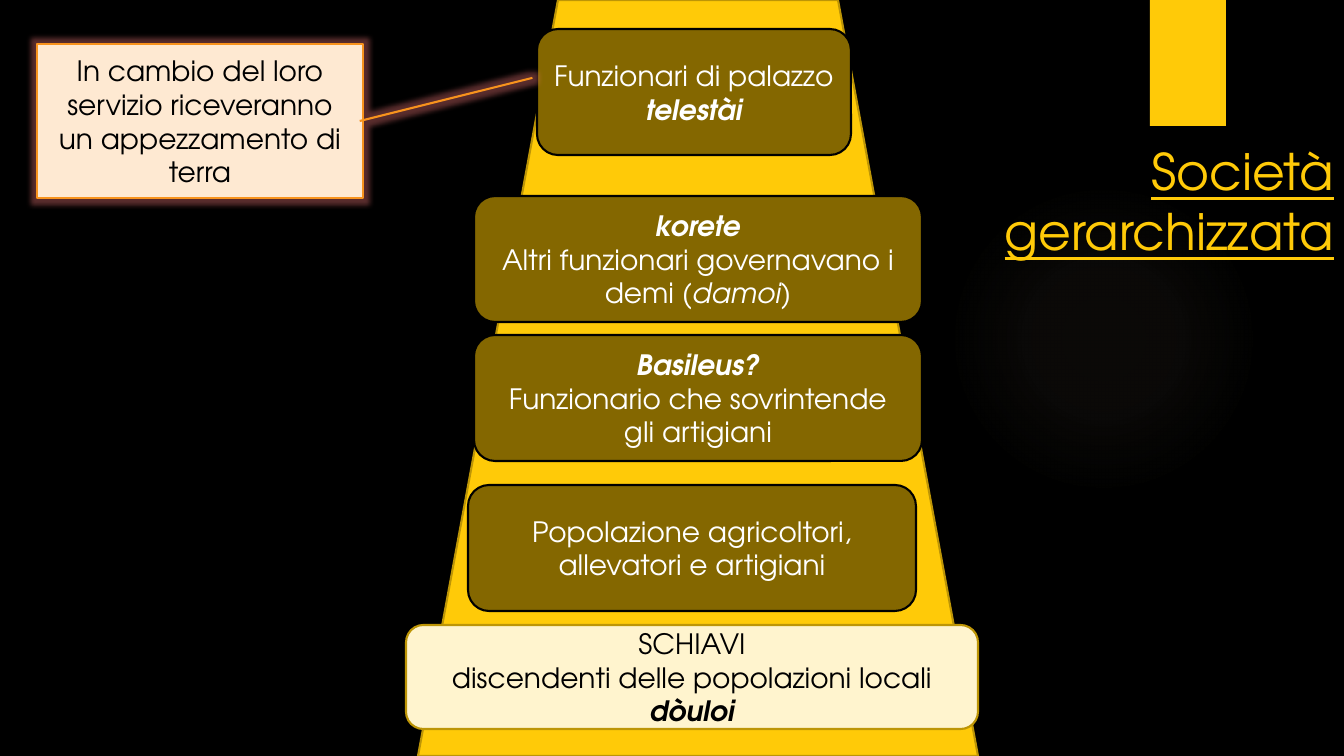
from lxml.etree import SubElement
from pptx import Presentation
from pptx.dml.color import RGBColor
from pptx.enum.shapes import MSO_SHAPE as Shape
from pptx.enum.text import MSO_ANCHOR as Anchor, PP_ALIGN as Align
from pptx.oxml import parse_xml
from pptx.oxml.ns import nsdecls, qn
from pptx.util import Pt

PX = 914400 / 100.8
FONT = "TeX Gyre Adventor"
GOLD, DARK_GOLD, OLIVE, CREAM = "FFCA08", "BD9506", "846700", "FFF4CE"
PEACH, ORANGE, GLOW, HALO = "FEE9D2", "F8931D", "FF8080", "968071"
BLACK, WHITE = "000000", "FFFFFF"
PLAIN, ITALIC, STRONG = (False, False), (False, True), (True, True)

# Box, fill, line, text colour, paragraphs of (text, (bold, italic)) spans
LEVELS = [
    ((474, 196, 448, 126), OLIVE, BLACK, WHITE,
     [[("korete", STRONG)],
      [("Altri funzionari governavano i demi (", PLAIN), ("damoi)", ITALIC)]]),
    ((406, 625, 572, 104), CREAM, DARK_GOLD, BLACK,
     [[("SCHIAVI", PLAIN)],
      [("discendenti delle popolazioni locali", PLAIN)],
      [("dòuloi", STRONG)]]),
    ((537, 29, 314, 126), OLIVE, BLACK, WHITE,
     [[("Funzionari di palazzo", PLAIN)], [("telestài", STRONG)]]),
    ((474, 335, 448, 126), OLIVE, BLACK, WHITE,
     [[("Basileus?", STRONG)],
      [("Funzionario che sovrintende gli artigiani", PLAIN)]]),
    ((468, 485, 448, 126), OLIVE, BLACK, WHITE,
     [[("Popolazione agricoltori, allevatori e artigiani", PLAIN)]]),
]


def px(length):
    return round(length * PX)


def colour(code):
    return RGBColor.from_string(code)


def add_box(page, kind, box, fill, line=None):
    shape = page.shapes.add_shape(kind, *map(px, box))
    shape.shadow.inherit = False
    shape.fill.solid()
    shape.fill.fore_color.rgb = colour(fill)
    if line:
        shape.line.color.rgb = colour(line)
        shape.line.width = Pt(1.5)
    else:
        shape.line.fill.background()
    return shape


def write(shape, paragraphs, ink):
    frame = shape.text_frame
    frame.word_wrap = True
    frame.vertical_anchor = Anchor.MIDDLE
    for index, spans in enumerate(paragraphs):
        para = frame.add_paragraph() if index else frame.paragraphs[0]
        para.alignment = Align.CENTER
        para.font.name, para.font.size = FONT, Pt(20)
        para.font.color.rgb = colour(ink)
        for text, (bold, italic) in spans:
            span = para.add_run()
            span.text = text
            span.font.bold, span.font.italic = bold, italic


def add_halo(page, box):
    """Add a faint circle that fades out from its centre."""
    halo = add_box(page, Shape.OVAL, box, HALO)
    stops = "".join(
        f'<a:gs pos="{place * 1000}"><a:srgbClr val="{HALO}">'
        f'<a:alpha val="{alpha * 1000}"/></a:srgbClr></a:gs>'
        for place, alpha in [(0, 7), (36, 6), (69, 0), (100, 0)])
    gradient = parse_xml(
        f'<a:gradFill {nsdecls("a")}><a:gsLst>{stops}</a:gsLst>'
        '<a:path path="circle"><a:fillToRect l="50000" t="50000" r="50000" '
        'b="50000"/></a:path></a:gradFill>')
    properties = halo.element.spPr
    properties.replace(properties.find(qn("a:solidFill")), gradient)


def set_title(page, box):
    title = page.shapes.title
    page.shapes.element.append(title.element)
    title.left, title.top, title.width, title.height = map(px, box)
    frame = title.text_frame
    frame.word_wrap = True
    frame.vertical_anchor = Anchor.TOP
    para = frame.paragraphs[0]
    para.text = "Società\vgerarchizzata"
    para.alignment = Align.RIGHT
    para.line_spacing = 1.0
    font = para.font
    font.name, font.size, font.underline = FONT, Pt(36), True
    font.color.rgb = colour(GOLD)


def add_callout(page, box):
    """Add the glowing note whose line points right to the top level."""
    note = add_box(page, Shape.LINE_CALLOUT_1, box, PEACH, ORANGE)
    for index, value in enumerate([0.5, 0.01, 0.22, -0.52]):
        note.adjustments[index] = value
    properties = note.element.spPr
    properties.find(qn("a:xfrm")).set("flipH", "1")
    glow = SubElement(properties.find(qn("a:effectLst")), qn("a:glow"),
                      rad=str(px(10)))
    tint = SubElement(glow, qn("a:srgbClr"), val=GLOW)
    SubElement(tint, qn("a:alpha"), val="35000")
    write(note, [[("In cambio del loro servizio riceveranno "
                   "un appezzamento di terra", PLAIN)]], BLACK)


def add_pyramid(page, box):
    add_box(page, Shape.TRAPEZOID, box, GOLD, DARK_GOLD)
    for level_box, fill, line, ink, paragraphs in LEVELS:
        level = add_box(page, Shape.ROUNDED_RECTANGLE, level_box, fill, line)
        write(level, paragraphs, ink)


def main():
    deck = Presentation()
    deck.slide_width, deck.slide_height = px(1344), px(756)
    page = deck.slides.add_slide(deck.slide_layouts[5])
    page.background.fill.solid()
    page.background.fill.fore_color.rgb = colour(BLACK)
    add_halo(page, (949, 184, 310, 310))
    add_box(page, Shape.RECTANGLE, (1150, 0, 76, 126), GOLD)
    set_title(page, (959, 135, 385, 154))
    add_pyramid(page, (418, 0, 560, 756))
    add_callout(page, (37, 44, 326, 154))
    deck.save("out.pptx")


if __name__ == "__main__":
    main()
